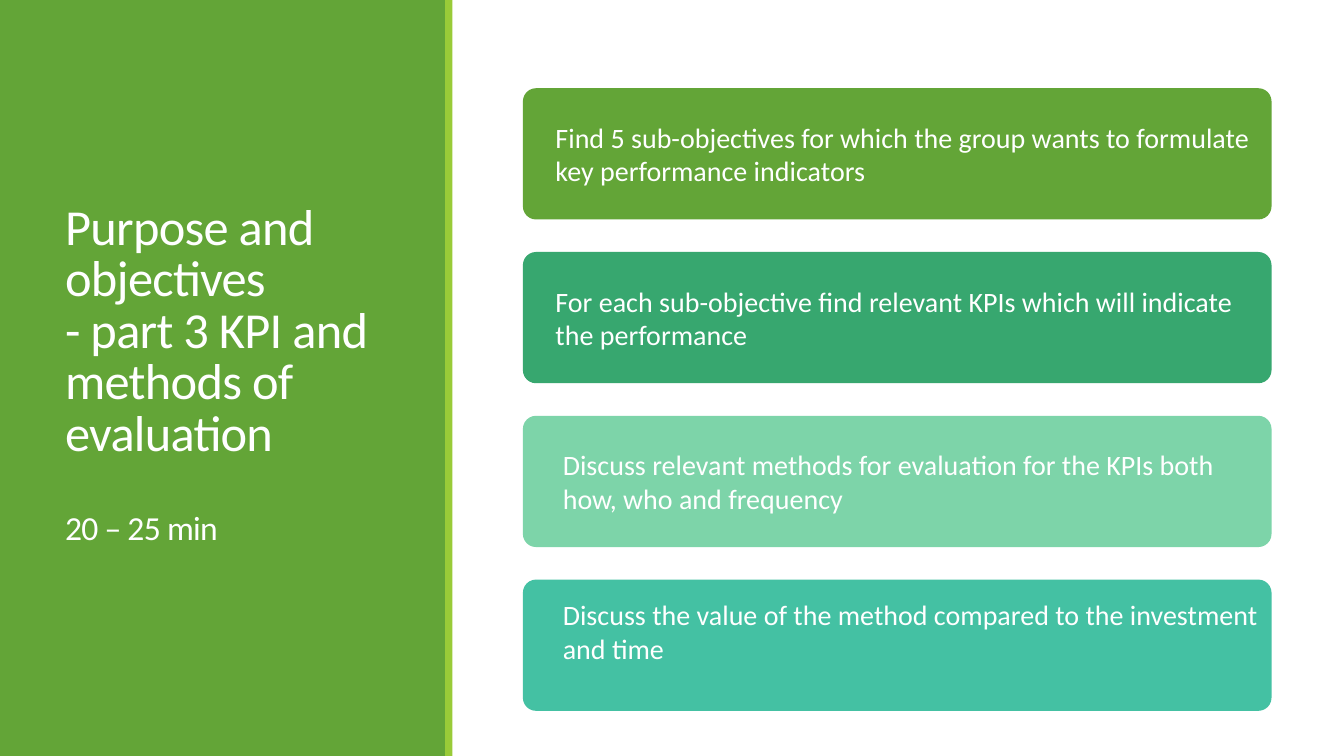
from pptx import Presentation
from pptx.dml.color import RGBColor
from pptx.enum.shapes import MSO_SHAPE
from pptx.enum.text import MSO_ANCHOR
from pptx.util import Pt

PX = 9525  # one px is 1/96 inch

GREEN, LIME, WHITE = "63A537", "99CB38", "FFFFFF"

# Card grid
CARD_LEFT, CARD_TOP, CARD_WIDTH, CARD_HEIGHT, CARD_PITCH = 498, 84, 713, 125, 156

# Fill, text indent, text lift, wording
CARDS = [
    (GREEN, 18, 0, "Find 5 sub-objectives for which the group wants to formulate "
                   "key performance indicators"),
    ("37A76F", 18, 0, "For each sub-objective find relevant KPIs which will indicate "
                      "the performance"),
    ("7DD4A9", 25, 0, "Discuss relevant methods for evaluation for the KPIs both "
                      "how, who and frequency"),
    ("44C1A3", 25, 13, "Discuss the value of the method compared to the "
                       "investment and time"),
]

# Wording, size, space before, all in points
TITLE_LINES = [
    ("Purpose and objectives", 36, 0),
    ("- part 3 KPI and methods of evaluation", 36, 0),
    ("20 – 25 min", 24, 37),
]


def color(value):
    return RGBColor.from_string(value)


def set_all(target, values):
    for name, value in values.items():
        setattr(target, name, value)


def add_panel(page, kind, left, top, width, height, fill):
    panel = page.shapes.add_shape(kind, left * PX, top * PX, width * PX, height * PX)
    panel.shadow.inherit = False
    panel.fill.solid()
    panel.fill.fore_color.rgb = color(fill)
    panel.line.fill.background()
    return panel


def add_text_frame(page, left, top, width, height, margin_x, margin_y):
    box = page.shapes.add_textbox(left * PX, top * PX, width * PX, height * PX)
    set_all(box.text_frame, {
        "word_wrap": True, "vertical_anchor": MSO_ANCHOR.MIDDLE,
        "margin_left": margin_x * PX, "margin_right": margin_x * PX,
        "margin_top": margin_y * PX, "margin_bottom": margin_y * PX,
    })
    return box.text_frame


def add_span(para, text, size):
    span = para.add_run()
    span.text = text
    set_all(span.font, {"name": "Calibri", "size": Pt(size)})
    span.font.color.rgb = color(WHITE)
    return span


def add_title(page):
    frame = add_text_frame(page, 52, 55, 324, 606, 10, 5)
    for index, (text, size, gap) in enumerate(TITLE_LINES):
        para = frame.add_paragraph() if index else frame.paragraphs[0]
        set_all(para, {"line_spacing": 0.85, "space_before": Pt(gap)})
        span = add_span(para, text, size)
        span._r.get_or_add_rPr().set("spc", "-50")


def add_card(page, row, fill, indent, lift, text):
    top = CARD_TOP + row * CARD_PITCH
    card = add_panel(page, MSO_SHAPE.ROUNDED_RECTANGLE,
                     CARD_LEFT, top, CARD_WIDTH, CARD_HEIGHT, fill)
    card.adjustments[0] = 0.1
    frame = add_text_frame(page, CARD_LEFT + indent, top - lift,
                           CARD_WIDTH - indent, CARD_HEIGHT, 13, 13)
    add_span(frame.paragraphs[0], text, 20)


def main():
    deck = Presentation()
    set_all(deck, {"slide_width": 1280 * PX, "slide_height": 720 * PX})
    page = deck.slides.add_slide(deck.slide_layouts[6])

    # Title side
    add_panel(page, MSO_SHAPE.RECTANGLE, 0, 0, 425, 720, GREEN)
    add_title(page)
    add_panel(page, MSO_SHAPE.RECTANGLE, 424, 0, 7, 720, LIME)

    # Task cards
    for row, card in enumerate(CARDS):
        add_card(page, row, *card)

    deck.save("out.pptx")


if __name__ == "__main__":
    main()
